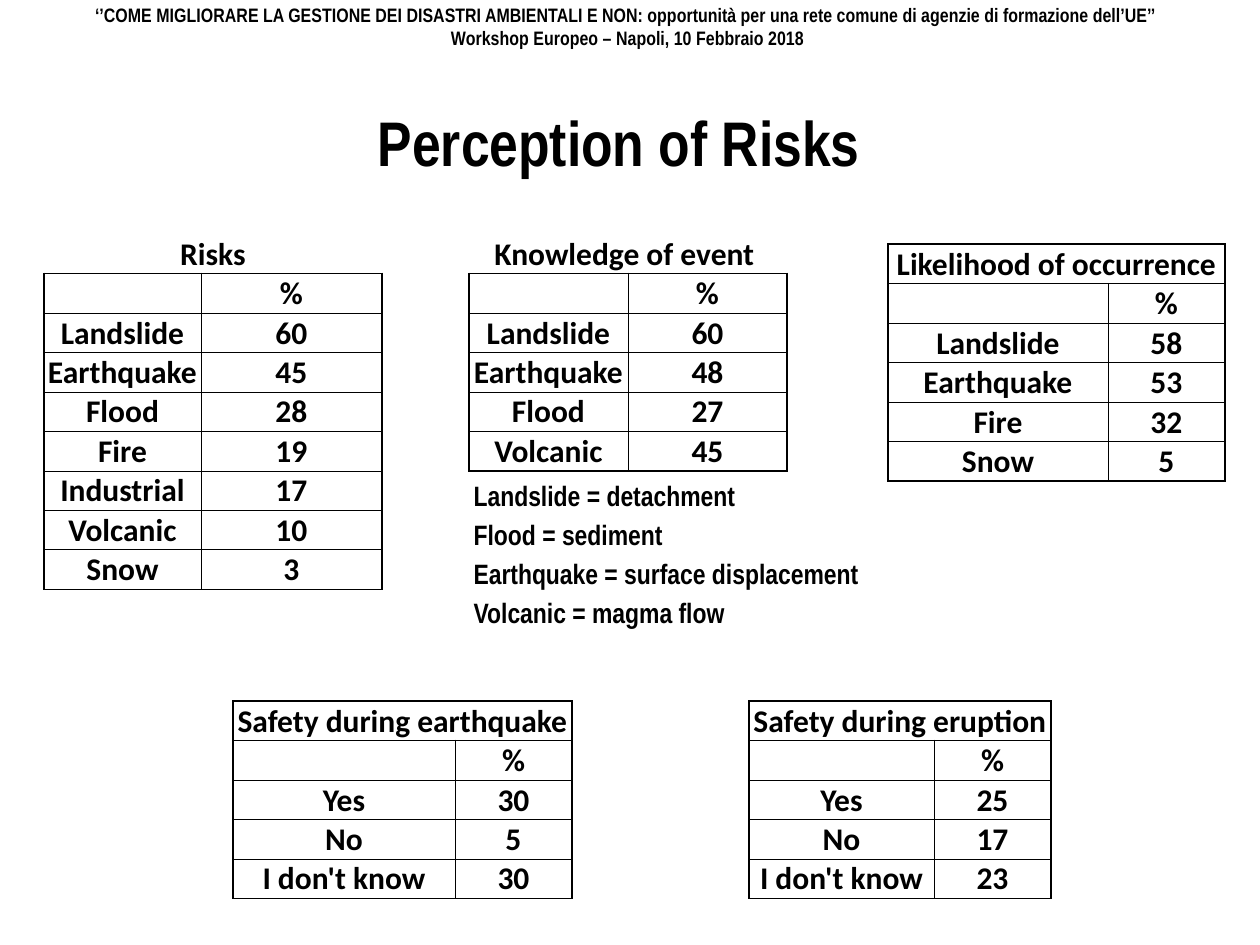
from lxml import etree
from pptx import Presentation
from pptx.dml.color import RGBColor
from pptx.enum.text import MSO_ANCHOR, MSO_AUTO_SIZE, PP_ALIGN
from pptx.oxml.ns import qn
from pptx.util import Emu, Pt

MIDDLE, TOP, BOTTOM = MSO_ANCHOR.MIDDLE, MSO_ANCHOR.TOP, MSO_ANCHOR.BOTTOM
CENTER, JUSTIFY = PP_ALIGN.CENTER, PP_ALIGN.JUSTIFY
NO_AUTOFIT = MSO_AUTO_SIZE.NONE

COLORS = {"ink": "000000"}
HEADING_FONT, TABLE_FONT = "Arial Narrow", "Calibri"
ROW_HEIGHT = 39
THICK, THIN, NONE = 1, 0.5, 0

TITLE = "Perception of Risks"
HEADER = [
    "‘’COME MIGLIORARE LA GESTIONE DEI DISASTRI AMBIENTALI E NON: opportunità per una rete comune di agenzie di formazione dell’UE’’ ",
    "Workshop Europeo – Napoli, 10 Febbraio 2018",
]
DEFINITIONS = [
    "Landslide = detachment",
    "Flood = sediment",
    "Earthquake = surface displacement",
    "Volcanic = magma flow",
]
TABLES = [
    {"title": "Risks", "boxed": False, "at": (44, 234), "columns": (157, 181),
     "rows": [("Landslide", 60), ("Earthquake", 45), ("Flood", 28), ("Fire", 19),
              ("Industrial", 17), ("Volcanic", 10), ("Snow", 3)]},
    {"title": "Knowledge of event ", "boxed": False, "at": (469, 234), "columns": (159, 159),
     "rows": [("Landslide", 60), ("Earthquake", 48), ("Flood", 27), ("Volcanic", 45)]},
    {"title": "Safety during earthquake", "boxed": True, "at": (233, 701), "columns": (222, 117),
     "rows": [("Yes", 30), ("No", 5), ("I don't know", 30)]},
    {"title": "Likelihood of occurrence", "boxed": True, "at": (888, 244), "columns": (220, 117),
     "rows": [("Landslide", 58), ("Earthquake", 53), ("Fire", 32), ("Snow", 5)]},
    {"title": "Safety during eruption", "boxed": True, "at": (749, 701), "columns": (185, 117),
     "rows": [("Yes", 25), ("No", 17), ("I don't know", 23)]},
]


def px(length):
    return Emu(round(length * 914400 / 126))


def format_text(frame, font, size, align):
    for para in frame.paragraphs:
        para.alignment = align
        for span in para.runs:
            span.font.name = font
            span.font.size = Pt(size)
            span.font.bold = True
            span.font.color.rgb = RGBColor.from_string(COLORS["ink"])


def fill_box(box, area, lines, size, align, anchor):
    box.left, box.top, box.width, box.height = map(px, area)
    frame = box.text_frame
    frame.word_wrap = True
    frame.auto_size = NO_AUTOFIT
    frame.vertical_anchor = anchor
    frame.text = "\n".join(lines)
    format_text(frame, HEADING_FONT, size, align)


def set_borders(cell, widths):
    properties = cell._tc.get_or_add_tcPr()
    for side, width in zip("LRTB", widths):
        line = etree.SubElement(properties, qn(f"a:ln{side}"), w=str(Pt(width)))
        if width:
            fill = etree.SubElement(line, qn("a:solidFill"))
            etree.SubElement(fill, qn("a:srgbClr"), val=COLORS["ink"])
        else:
            etree.SubElement(line, qn("a:noFill"))


def border_widths(row, column, last_row, boxed):
    if row == 0:
        edge = THICK if boxed else NONE
        return edge, edge, edge, THICK
    return (
        THICK if column == 0 else THIN,
        THICK if column == 1 else THIN,
        THICK if row == 1 else THIN,
        THICK if row == last_row else THIN,
    )


def add_percent_table(page, data):
    rows = [(data["title"], ""), ("", "%"), *data["rows"]]
    left, top = data["at"]
    frame = page.shapes.add_table(
        len(rows), 2, px(left), px(top), px(sum(data["columns"])), px(ROW_HEIGHT * len(rows)))
    table = frame.table
    table.first_row = table.horz_banding = False
    for column, width in zip(table.columns, data["columns"]):
        column.width = px(width)
    for r, values in enumerate(rows):
        table.rows[r].height = px(ROW_HEIGHT)
        for c, value in enumerate(values):
            cell = table.cell(r, c)
            cell.margin_left = cell.margin_right = cell.margin_top = px(1)
            cell.margin_bottom = 0
            cell.vertical_anchor = BOTTOM
            set_borders(cell, border_widths(r, c, len(rows) - 1, data["boxed"]))
            cell.fill.background()
            if value != "":
                cell.text_frame.text = str(value)
                format_text(cell.text_frame, TABLE_FONT, 18, CENTER)
    table.cell(0, 0).merge(table.cell(0, 1))


def main():
    deck = Presentation()
    deck.slide_width, deck.slide_height = px(1260), px(945)
    page = deck.slides.add_slide(deck.slide_layouts[1])

    for data in TABLES:
        add_percent_table(page, data)

    fill_box(page.shapes.title, (44, 88, 1150, 106), [TITLE], 36, CENTER, MIDDLE)
    header = page.shapes.add_textbox(0, 0, 0, 0)
    fill_box(header, (-5, 0, 1265, 53), HEADER, 11.1, CENTER, MIDDLE)

    definitions = page.placeholders[1]
    fill_box(definitions, (461, 472, 456, 179), DEFINITIONS, 16, JUSTIFY, TOP)
    for para in definitions.text_frame.paragraphs:
        properties = para._p.get_or_add_pPr()
        properties.set("marL", "0")
        properties.set("indent", "0")
        etree.SubElement(properties, qn("a:buNone"))

    deck.save("out.pptx")


if __name__ == "__main__":
    main()
